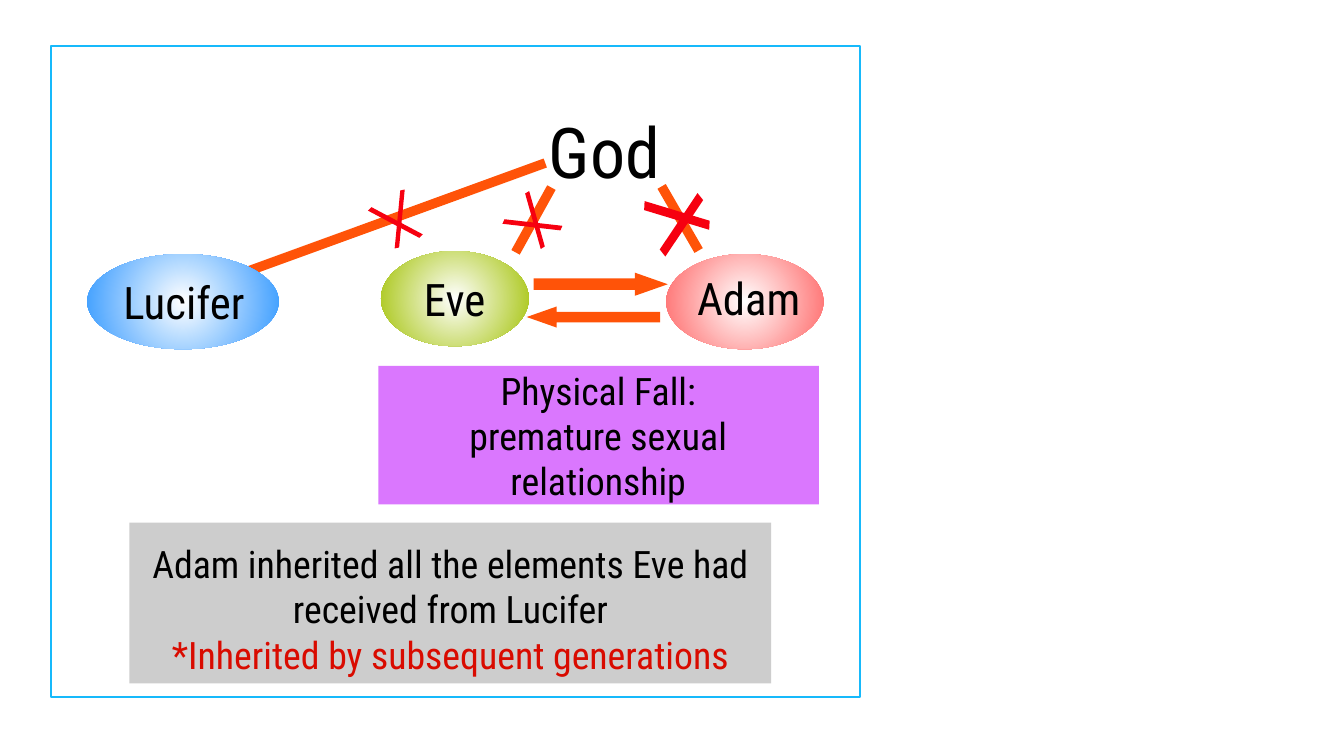
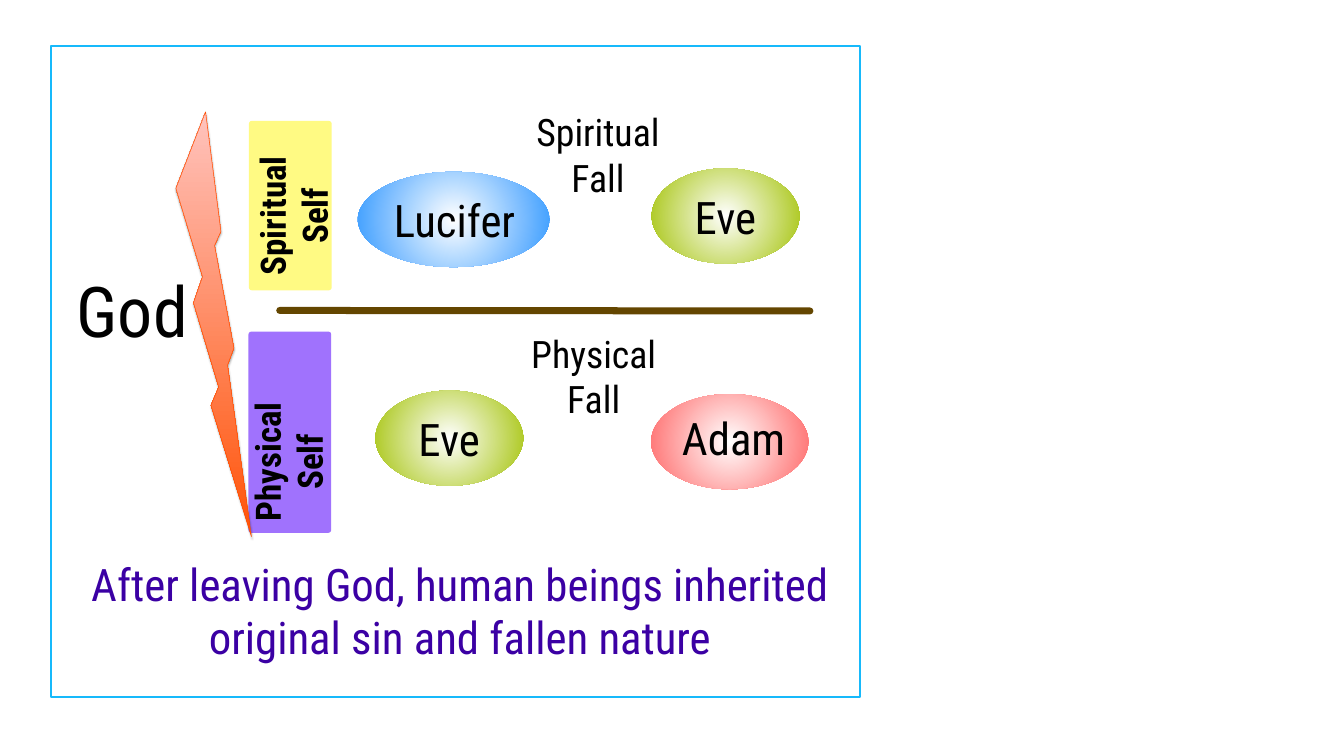
from typing import NamedTuple, Optional

from lxml import etree
from pptx import Presentation
from pptx.dml.color import RGBColor
from pptx.enum.shapes import MSO_CONNECTOR, MSO_SHAPE as Preset
from pptx.enum.text import MSO_ANCHOR as Anchor, PP_ALIGN as Align
from pptx.oxml.ns import qn
from pptx.util import Pt

FONT = "Roboto Condensed"
BLACK, WHITE = "000000", "FFFFFF"
ORANGE, CROSS_RED, NOTE_RED = "FF5308", "F60010", "D90B00"
FRAME_BLUE, BROWN, INDIGO = "17B9FB", "644600", "3B00A4"
GREY, PINK_PURPLE, YELLOW, VIOLET = "CDCDCD", "DA77FE", "FFFA83", "A072FD"
FIGURE_HEIGHT, LABEL_HEIGHT = 136, 76.3


class Area(NamedTuple):
    left: float
    top: float
    width: float
    height: float

    def lengths(self) -> list:
        return [Pt(value) for value in self]


class Figure(NamedTuple):
    name: str
    color: str
    width: float
    label_left: float  # label position relative to the ellipse
    label_top: float
    label_width: float


class Stroke(NamedTuple):
    start: tuple
    end: tuple
    edge: tuple  # offset to the parallel side


class Panel(NamedTuple):
    area: Area
    color: str
    corner: float


class Label(NamedTuple):
    area: Area
    lines: list
    size: float
    colors: tuple = (BLACK,)
    anchor: Anchor = Anchor.TOP


ADAM = Figure("Adam", "FF6666", 224.6, -42.8, 23.8, 321.1)
EVE = Figure("Eve", "A3C205", 211, 15.6, 30.2, 179.3)
LUCIFER = Figure("Lucifer", "3399FF", 273.6, -14.4, 30, 305.3)


def rgb(color: str) -> RGBColor:
    return RGBColor.from_string(color)


def paint(shape, fill: Optional[str] = None, line: Optional[str] = None, weight: float = 0):
    shape.shadow.inherit = False
    if fill:
        shape.fill.solid()
        shape.fill.fore_color.rgb = rgb(fill)
    else:
        shape.fill.background()
    if line:
        shape.line.color.rgb = rgb(line)
        shape.line.width = Pt(weight)
    else:
        shape.line.fill.background()
    return shape


def add_preset(page, preset: Preset, area: Area, fill: Optional[str] = None,
               adjustments: tuple = (), rotation: float = 0):
    shape = paint(page.shapes.add_shape(preset, *area.lengths()), fill)
    for index, value in enumerate(adjustments):
        shape.adjustments[index] = value
    shape.rotation = rotation
    return shape


def set_gradient(shape, first: str, last: str, radial: bool) -> None:
    shape.fill.gradient()
    for stop, color, position in zip(shape.fill.gradient_stops, (first, last), (0, 1)):
        stop.color.rgb = rgb(color)
        stop.position = position
    if not radial:
        shape.fill.gradient_angle = 90
        return
    gradient = shape.element.spPr.find(qn("a:gradFill"))
    gradient.remove(gradient.find(qn("a:lin")))
    circle = etree.SubElement(gradient, qn("a:path"), path="circle")
    sides = dict.fromkeys("ltrb", "50000")
    etree.SubElement(circle, qn("a:fillToRect"), **sides)


def add_label(page, label: Label, bold: bool = False, inset: bool = False):
    box = page.shapes.add_textbox(*label.area.lengths())
    frame = box.text_frame
    frame.word_wrap = True
    frame.vertical_anchor = label.anchor
    if not inset:
        frame.margin_left = frame.margin_right = 0
        frame.margin_top = frame.margin_bottom = 0
    for index, text in enumerate(label.lines):
        para = frame.add_paragraph() if index else frame.paragraphs[0]
        para.add_run().text = text
        para.alignment = Align.CENTER
        para.font.name = FONT
        para.font.size = Pt(label.size)
        para.font.bold = bold
        para.font.color.rgb = rgb(label.colors[min(index, len(label.colors) - 1)])
    return box


def add_upward_label(page, area: Area, lines: list) -> None:
    box = add_label(page, Label(area, lines, 50), bold=True, inset=True)
    box.text_frame._txBody.bodyPr.set("vert", "eaVert")
    box.rotation = 180


def add_panel(page, panel: Panel) -> None:
    add_preset(page, Preset.ROUNDED_RECTANGLE, panel.area, panel.color, (panel.corner,))


def add_figure(page, figure: Figure, left: float, top: float) -> None:
    area = Area(left, top, figure.width, FIGURE_HEIGHT)
    set_gradient(add_preset(page, Preset.OVAL, area), WHITE, figure.color, radial=True)
    label_area = Area(left + figure.label_left, top + figure.label_top,
                      figure.label_width, LABEL_HEIGHT)
    add_label(page, Label(label_area, [figure.name], 64))


def add_stroke(page, stroke: Stroke) -> None:
    (x1, y1), (x2, y2), (dx, dy) = stroke
    corners = [(x2, y2), (x2 + dx, y2 + dy), (x1 + dx, y1 + dy)]
    builder = page.shapes.build_freeform(Pt(x1), Pt(y1))
    builder.add_line_segments([(Pt(x), Pt(y)) for x, y in corners], close=True)
    paint(builder.convert_to_shape(), CROSS_RED)


def add_page(deck):
    page = deck.slides.add_slide(deck.slide_layouts[6])
    frame = add_preset(page, Preset.RECTANGLE, Area(73.4, 66.2, 1154.9, 930.2))
    paint(frame, line=FRAME_BLUE, weight=3)
    return page


def build_physical_fall(deck) -> None:
    page = add_page(deck)

    # Explanations
    add_panel(page, Panel(Area(185, 746.6, 916.6, 229.7), GREY, 0))
    add_label(page, Label(Area(211, 772.6, 865.4, 179.3),
                          ["Adam inherited all the elements Eve had received from Lucifer",
                           "*Inherited by subsequent generations"], 54, (BLACK, NOTE_RED)))
    add_panel(page, Panel(Area(540.7, 522.7, 629.3, 198), PINK_PURPLE, 0))
    add_label(page, Label(Area(610.6, 553.7, 488.2, 136.8),
                          ["Physical Fall: premature sexual relationship"], 54,
                          anchor=Anchor.MIDDLE))

    # Broken ties with God
    ties = [(918.7, 305.3, 105.8, 60), (337.7, 303.8, 455, 160), (709.2, 307.4, 105.8, 119)]
    for left, top, length, angle in ties:
        add_preset(page, Preset.RECTANGLE, Area(left, top, length, 13.7), ORANGE,
                   rotation=angle)
    crosses = [
        Stroke((578.2, 270.7), (570.2, 353.5), (-6.4, 1.5)),
        Stroke((530.6, 295.9), (604.1, 334.8), (-5, 5)),
        Stroke((756, 272.9), (778.3, 352.1), (-5.8, 3.6)),
        Stroke((720.7, 313.2), (803.5, 322.6), (-2.9, 6.5)),
        Stroke((920.9, 287.3), (1013.8, 315.4), (-0.7, 12.9)),
        Stroke((942.5, 356.4), (996.5, 275.8), (8, 10.1)),
    ]
    for stroke in crosses:
        add_stroke(page, stroke)

    # Figures
    add_figure(page, ADAM, 951.8, 362.9)
    add_figure(page, EVE, 544.3, 358.6)
    add_figure(page, LUCIFER, 124.6, 362.9)
    add_label(page, Label(Area(784.1, 154.8, 159.1, 64.8), ["God"], 100))

    # Arrows between Eve and Adam
    arrows = [(Area(762.5, 389.5, 191.5, 33.1), False), (Area(752.4, 437.8, 190.8, 30.2), True)]
    for area, flipped in arrows:
        arrow = add_preset(page, Preset.RIGHT_ARROW, area, ORANGE, (0.495, 1.423))
        if flipped:
            arrow.element.spPr.find(qn("a:xfrm")).set("flipH", "1")


def add_divider(page) -> None:
    divider = page.shapes.add_connector(MSO_CONNECTOR.STRAIGHT, Pt(399.6), Pt(443.5),
                                        Pt(1157), Pt(444.2))
    divider.line.color.rgb = rgb(BROWN)
    divider.line.width = Pt(10)
    properties = divider.element.spPr
    properties.find(qn("a:ln")).set("cap", "rnd")
    etree.SubElement(properties, qn("a:effectLst"))


def add_lightning(page) -> None:
    bolt = add_preset(page, Preset.LIGHTNING_BOLT, Area(251.3, 159.8, 108, 607))
    set_gradient(bolt, ORANGE, "FFC3BD", radial=False)
    bolt.line.color.rgb = rgb("FF4F02")
    bolt.line.width = Pt(0.75)
    effects = bolt.element.spPr.find(qn("a:effectLst"))
    shadow = etree.SubElement(effects, qn("a:outerShdw"), blurRad=str(Pt(3.1)),
                              dist=str(Pt(1.8)), dir="5400000", rotWithShape="0")
    color = etree.SubElement(shadow, qn("a:srgbClr"), val=BLACK)
    etree.SubElement(color, qn("a:alpha"), val="35000")


def build_inheritance(deck) -> None:
    page = add_page(deck)

    # Two selves and the line between them
    add_panel(page, Panel(Area(355.7, 172.8, 118.1, 241.9), YELLOW, 0.032))
    add_panel(page, Panel(Area(355, 473.8, 118.1, 287.3), VIOLET, 0.032))
    add_divider(page)

    # Captions
    add_label(page, Label(Area(-9.4, 794.9, 1332.7, 146.2),
                          ["After leaving God, human beings inherited",
                           "original sin and fallen nature"], 64, (INDIGO,)))
    add_label(page, Label(Area(756.7, 155.5, 195.1, 123.8), ["Spiritual Fall"], 54))
    add_label(page, Label(Area(734.4, 472.3, 227.5, 123.8), ["Physical Fall"], 54))
    add_upward_label(page, Area(355, 201.6, 135.4, 198.7), ["Spiritual Self"])
    add_upward_label(page, Area(347.8, 484.6, 135.4, 267.1), ["Physical", "Self"])

    # Figures
    add_figure(page, EVE, 931, 240.5)
    add_figure(page, LUCIFER, 511.2, 245.5)
    add_figure(page, ADAM, 930.2, 563)
    add_figure(page, EVE, 536.4, 558)
    add_label(page, Label(Area(109.4, 381.6, 159.1, 164.2), ["God"], 100))
    add_lightning(page)


def main() -> None:
    deck = Presentation()
    deck.slide_width, deck.slide_height = Pt(1920), Pt(1080)
    build_physical_fall(deck)
    build_inheritance(deck)
    deck.save("out.pptx")


if __name__ == "__main__":
    main()
